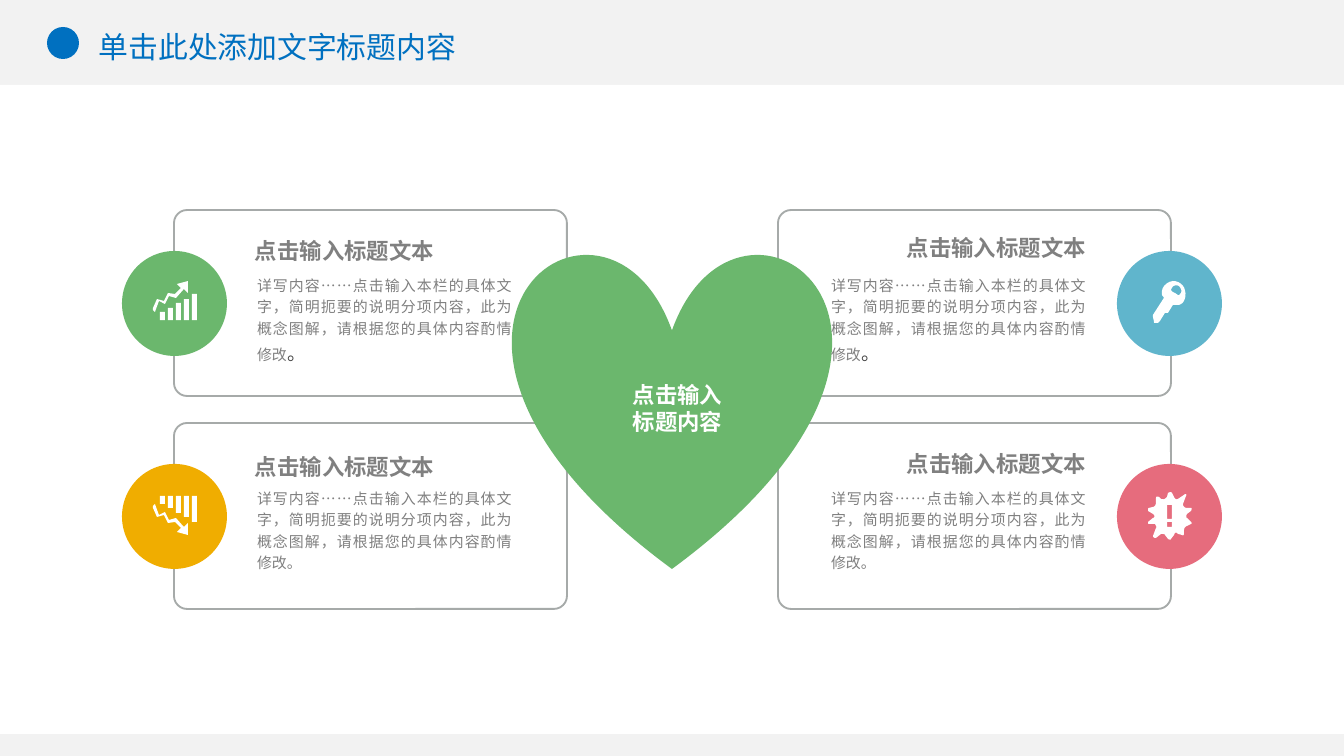
"""Build a slide with a central heart, four cards and their icon badges."""
from dataclasses import dataclass

from lxml.etree import SubElement
from pptx import Presentation
from pptx.dml.color import RGBColor
from pptx.enum.shapes import MSO_SHAPE as Preset
from pptx.enum.text import MSO_ANCHOR as Anchor, PP_ALIGN as Align
from pptx.oxml.ns import qn
from pptx.util import Pt

SCALE = 914400 / 134.4

HEADING = "点击输入标题文本"
BODY = "详写内容……点击输入本栏的具体文字，简明扼要的说明分项内容，此为概念图解，请根据您的具体内容酌情修改"

TREND_ARROW = [
    (16, 15), (23, 17), (30, 9), (31, 8), (35, 12), (35, 0), (24, 3), (28, 7), (22, 13),
    (15, 12), (11, 20), (4, 18), (0, 27), (0, 29), (2, 31), (6, 20), (12, 23),
]
TREND_HEIGHT = 39
BAR_TOPS = (31, 27, 22, 18, 13)

KEY = [
    [(27, 13), (26, 16, 24, 13, 22, 12), (19, 11, 17, 9, 19, 7), (20, 4, 24, 4, 26, 5),
     (28, 7, 30, 11, 27, 13)],
    [(32, 9), (31, 4, 26, 0, 20, 0), (13, 1, 8, 7, 9, 13), (9, 15, 11, 16, 11, 17),
     (0, 34), (0, 35, 0, 36, 0, 36), (1, 40), (1, 42, 1, 42, 3, 42), (5, 42),
     (5, 42, 7, 40, 7, 40), (12, 32), (15, 32), (20, 24), (22, 24, 24, 24, 26, 24),
     (31, 23, 34, 16, 32, 9)],
]

GEAR_OUTLINE = [
    (43, 30), (39, 26), (38, 26, 38, 23, 39, 22), (43, 19), (44, 17, 44, 16, 43, 16),
    (38, 16), (35, 15, 35, 13, 35, 12), (38, 4), (39, 3, 38, 1, 36, 3),
    (30, 7), (28, 8, 27, 7, 26, 5), (24, 1), (23, 0, 22, 0, 20, 1),
    (19, 5), (17, 7, 16, 8, 13, 7), (11, 5), (8, 4, 8, 5, 8, 7),
    (8, 11), (8, 12, 7, 15, 5, 15), (1, 16), (0, 16, 0, 17, 0, 19),
    (5, 22), (7, 23, 7, 26, 5, 26), (0, 30), (0, 31, 0, 32, 1, 32),
    (7, 32), (8, 34, 9, 35, 8, 36), (5, 44), (5, 46, 7, 46, 8, 46),
    (13, 42), (15, 42, 17, 42, 17, 43), (20, 47), (22, 48, 23, 48, 23, 47),
    (26, 43), (27, 40, 28, 40, 30, 42), (34, 43), (35, 44, 36, 43, 36, 42),
    (36, 38), (36, 36, 38, 34, 39, 34), (43, 32), (44, 32, 44, 31, 43, 30),
]


@dataclass(frozen=True)
class Theme:
    """Colours, type sizes and the font of the slide."""
    font: str = "Noto Sans CJK SC"
    backdrop: str = "F2F2F2"
    white: str = "FFFFFF"
    blue: str = "0070C0"
    border: str = "A6AAA9"
    grey: str = "808080"
    dark: str = "404040"
    green: str = "6BB76D"
    amber: str = "F0AD00"
    sky: str = "60B5CC"
    rose: str = "E66C7D"
    title_size: int = 16
    heading_size: int = 12
    stop_size: int = 10
    body_size: int = 8


def emu(pixels):
    """Turn px into EMU."""
    return round(pixels * SCALE)


def box(left, top, right, bottom):
    """Return the contour of a rectangle."""
    return [(left, top), (right, top), (right, bottom), (left, bottom)]


def flatten(contour, steps=6):
    """Turn a contour of lines and cubic curves into points."""
    points = [contour[0]]
    for segment in contour[1:]:
        if len(segment) == 2:
            points.append(segment)
            continue
        controls = [points[-1], segment[:2], segment[2:4], segment[4:]]
        for step in range(1, steps + 1):
            t = step / steps
            weights = ((1 - t) ** 3, 3 * t * (1 - t) ** 2, 3 * t * t * (1 - t), t ** 3)
            points.append(tuple(sum(w * c[axis] for w, c in zip(weights, controls))
                                for axis in (0, 1)))
    return points


class SlideBuilder:
    """Holds the theme and the current slide and draws each kind of element."""

    def __init__(self, slide, theme):
        """Keep the slide and the theme."""
        self.slide = slide
        self.theme = theme

    def background(self, color):
        """Fill the slide background."""
        fill = self.slide.background.fill
        fill.solid()
        fill.fore_color.rgb = RGBColor.from_string(color)

    def paint(self, shape, fill=None, line=None):
        """Set the fill and line of a shape and drop its shadow."""
        shape.shadow.inherit = False
        if fill:
            shape.fill.solid()
            shape.fill.fore_color.rgb = RGBColor.from_string(fill)
        else:
            shape.fill.background()
        if line:
            shape.line.color.rgb = RGBColor.from_string(line)
            shape.line.width = Pt(1)
        else:
            shape.line.fill.background()

    def shape(self, preset, left, top, width, height, fill=None, line=None):
        """Add a preset shape."""
        shape = self.slide.shapes.add_shape(preset, *map(emu, (left, top, width, height)))
        self.paint(shape, fill, line)
        return shape

    def card(self, left, top):
        """Add an outlined rounded card."""
        card = self.shape(Preset.ROUNDED_RECTANGLE, left, top, 393, 186, line=self.theme.border)
        card.adjustments[0] = 0.07

    def icon(self, left, top, contours):
        """Add a white icon made of closed contours."""
        placed = [[(emu(left + x), emu(top + y)) for x, y in flatten(contour)]
                  for contour in contours]
        builder = self.slide.shapes.build_freeform(*placed[0][0])
        for index, points in enumerate(placed):
            if index:
                builder.move_to(*points[0])
            builder.add_line_segments(points[1:], close=True)
        self.paint(builder.convert_to_shape(), self.theme.white)

    def format_run(self, run, size, color, bold=False):
        """Set the font of a run for Latin and East Asian text."""
        run.font.size = Pt(size)
        run.font.bold = bold
        run.font.color.rgb = RGBColor.from_string(color)
        run.font.name = self.theme.font
        SubElement(run.font._element, qn("a:ea")).set("typeface", self.theme.font)

    def text(self, left, top, width, height, text, size, color, bold=False,
             align=Align.LEFT, anchor=Anchor.TOP, spacing=None, wrap=True):
        """Add a text box without insets and return its paragraph."""
        shape = self.slide.shapes.add_textbox(*map(emu, (left, top, width, height)))
        frame = shape.text_frame
        frame.margin_left = frame.margin_right = frame.margin_top = frame.margin_bottom = 0
        frame.word_wrap = wrap
        frame.vertical_anchor = anchor
        frame.text = text
        paragraph = frame.paragraphs[0]
        paragraph.alignment = align
        if spacing:
            paragraph.line_spacing = spacing
        self.format_run(paragraph.runs[0], size, color, bold)
        return paragraph

    def heading(self, left, top, align, spacing):
        """Add the bold heading of a card."""
        self.text(left, top, 206, 44, HEADING, self.theme.heading_size, self.theme.grey,
                  bold=True, align=align, anchor=Anchor.MIDDLE, spacing=spacing)

    def body(self, left, top, large_stop):
        """Add the body text of a card, with a larger full stop if asked."""
        theme = self.theme
        text = BODY if large_stop else BODY + "。"
        paragraph = self.text(left, top, 255, 56, text, theme.body_size, theme.grey,
                              align=Align.JUSTIFY, spacing=1.2)
        if large_stop:
            run = paragraph.add_run()
            run.text = "。"
            self.format_run(run, theme.stop_size, theme.dark)


def main():
    """Build and save the slide."""
    theme = Theme()
    presentation = Presentation()
    presentation.slide_width, presentation.slide_height = emu(1344), emu(756)
    slide = presentation.slides.add_slide(presentation.slide_layouts[6])
    builder = SlideBuilder(slide, theme)

    builder.background(theme.backdrop)
    builder.shape(Preset.RECTANGLE, 0, 85, 1344, 649, theme.white)
    builder.text(99, 29, 378, 36, "单击此处添加文字标题内容", theme.title_size, theme.blue, wrap=False)
    builder.shape(Preset.OVAL, 47, 27, 32, 32, theme.blue)

    row_step = 213
    columns = ((174, 255, 257, 122, Align.LEFT, 1.2), (778, 880, 831, 1117, Align.RIGHT, None))
    heading_tops = (226, 442)
    badge_colors = ((theme.green, theme.amber), (theme.sky, theme.rose))

    for card_left, *_ in columns:
        for row in range(2):
            builder.card(card_left, 210 + row * row_step)
    builder.shape(Preset.HEART, 513, 251, 318, 318, theme.green)
    for column, colors in zip(columns, badge_colors):
        _, heading_left, body_left, badge_left, align, spacing = column
        for row, color in enumerate(colors):
            shift = row * row_step
            builder.body(body_left, 273 + shift, large_stop=row == 0)
            builder.heading(heading_left, heading_tops[row], align, spacing)
            builder.shape(Preset.OVAL, badge_left, 251 + shift, 105, 105, color)

    builder.text(630, 373, 95, 70, "点击输入标题内容", theme.heading_size, theme.white,
                 bold=True, align=Align.CENTER, anchor=Anchor.MIDDLE)

    bars = [box(7 + 8 * i, top, 12 + 8 * i, TREND_HEIGHT) for i, top in enumerate(BAR_TOPS)]
    growth = [TREND_ARROW, *bars]
    decline = [[(x, TREND_HEIGHT - y) for x, y in contour] for contour in growth]
    gear = [GEAR_OUTLINE, box(19, 13, 24, 27), box(19, 30, 24, 35)]
    for left, top, contours in ((153, 281, growth), (153, 496, decline),
                                (1153, 281, KEY), (1148, 492, gear)):
        builder.icon(left, top, contours)

    presentation.save("out.pptx")


if __name__ == "__main__":
    main()
